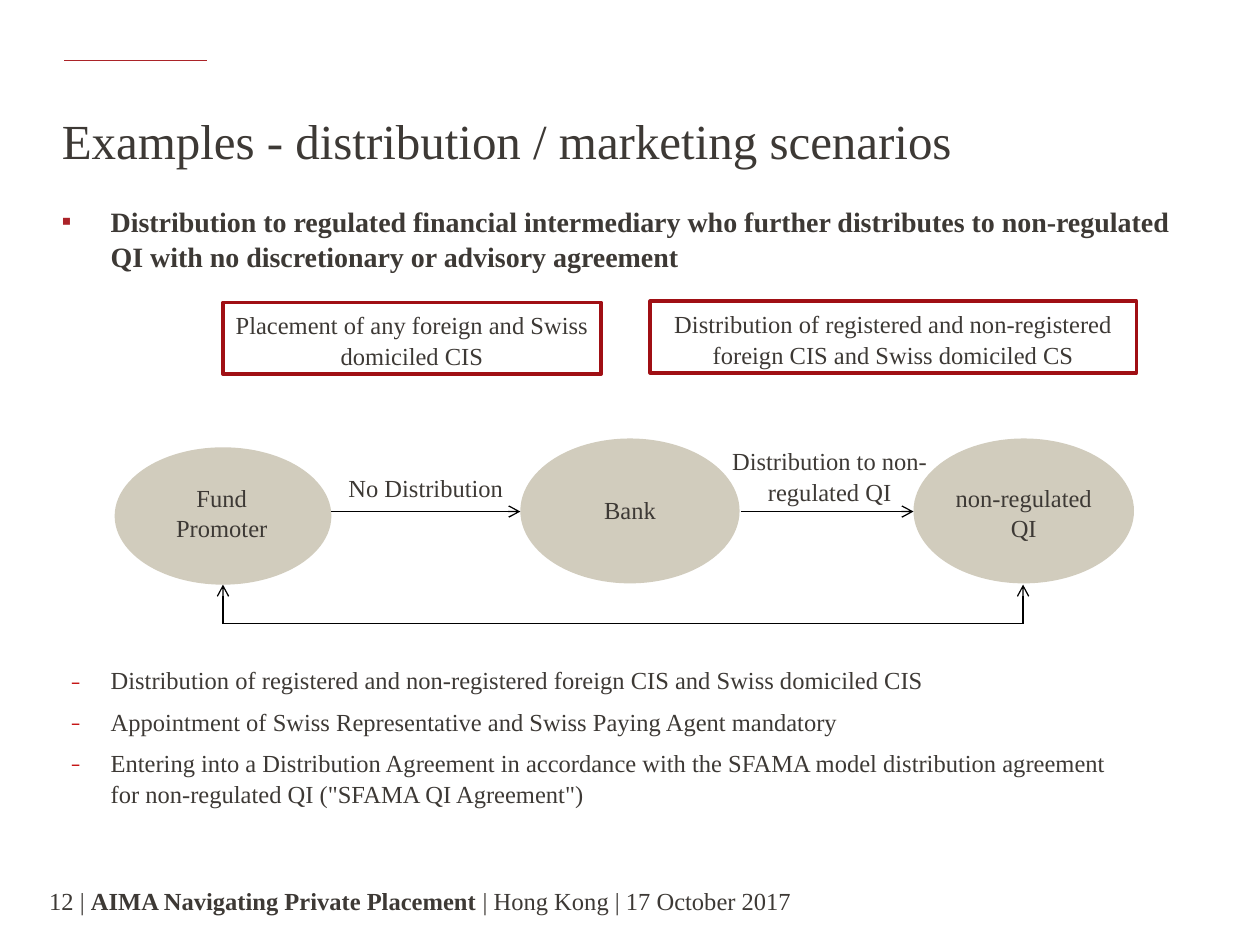
from dataclasses import dataclass
from typing import NamedTuple, Optional

from lxml.etree import SubElement
from pptx import Presentation
from pptx.dml.color import RGBColor
from pptx.enum.shapes import MSO_CONNECTOR as Connector, MSO_SHAPE as Preset
from pptx.enum.text import MSO_ANCHOR as Anchor, PP_ALIGN as Align
from pptx.oxml.ns import qn
from pptx.util import Inches, Pt


@dataclass(frozen=True)
class Theme:
    font: str = "Times New Roman"
    text: str = "3D3935"
    accent: str = "AB2328"
    bullet: str = "C00000"
    frame: str = "A00F14"
    oval: str = "D1CCBD"
    white: str = "FFFFFF"
    black: str = "000000"
    title_size: float = 28
    heading_size: float = 16
    body_size: float = 14
    line_spacing: float = 1.05


THEME = Theme()


class Box(NamedTuple):
    left: float
    top: float
    width: float
    height: float


class Run(NamedTuple):
    text: str
    bold: bool = False


class Bullet(NamedTuple):
    character: str
    color: str
    indent: float


class Label(NamedTuple):
    box: Box
    text: str
    wrap: bool = True
    inset: tuple = (0.1, 0.05, 0.1, 0.05)


class Line(NamedTuple):
    start: tuple
    end: tuple
    arrow: bool = True
    color: str = THEME.black
    width: float = 0.75


def rgb(color: str) -> RGBColor:
    return RGBColor.from_string(color)


def place(shape, box: Box) -> None:
    shape.left, shape.top, shape.width, shape.height = map(Inches, box)


def format_frame(frame, inset=(0.1, 0.05, 0.1, 0.05), anchor=Anchor.TOP, wrap=True) -> None:
    frame.word_wrap = wrap
    frame.vertical_anchor = anchor
    (frame.margin_left, frame.margin_top,
     frame.margin_right, frame.margin_bottom) = map(Inches, inset)


def add_bullet(paragraph, bullet: Bullet) -> None:
    properties = paragraph._p.get_or_add_pPr()
    properties.set("marL", str(Inches(bullet.indent)))
    properties.set("indent", str(-Inches(bullet.indent)))
    color = SubElement(properties, qn("a:buClr"))
    SubElement(color, qn("a:srgbClr"), val=bullet.color)
    SubElement(properties, qn("a:buFont"), typeface=THEME.font)
    SubElement(properties, qn("a:buChar"), char=bullet.character)


def write(paragraph, runs: list[Run], size: float = THEME.body_size,
          align=Align.LEFT, bullet: Optional[Bullet] = None) -> None:
    if bullet:
        add_bullet(paragraph, bullet)
        paragraph.space_after = Pt(6)
    paragraph.alignment = align
    paragraph.line_spacing = THEME.line_spacing
    for item in runs:
        run = paragraph.add_run()
        run.text = item.text
        run.font.name = THEME.font
        run.font.size = Pt(size)
        run.font.bold = item.bold
        run.font.color.rgb = rgb(THEME.text)


def add_text_box(slide, box: Box, **frame_options):
    shape = slide.shapes.add_textbox(*map(Inches, box))
    format_frame(shape.text_frame, **frame_options)
    return shape.text_frame


def add_label(slide, label: Label) -> None:
    frame = add_text_box(slide, label.box, inset=label.inset, wrap=label.wrap)
    write(frame.paragraphs[0], [Run(label.text)], align=Align.CENTER)


def add_list(slide, box: Box, items: list[Run], size: float, bullet: Bullet) -> None:
    frame = add_text_box(slide, box)
    for index, item in enumerate(items):
        paragraph = frame.add_paragraph() if index else frame.paragraphs[0]
        write(paragraph, [item], size, bullet=bullet)


def add_filled_shape(slide, preset, box: Box, fill: str):
    shape = slide.shapes.add_shape(preset, *map(Inches, box))
    shape.shadow.inherit = False
    shape.fill.solid()
    shape.fill.fore_color.rgb = rgb(fill)
    shape.line.fill.background()
    return shape


def add_callout(slide, label: Label) -> None:
    shape = add_filled_shape(slide, Preset.RECTANGLE, label.box, THEME.white)
    shape.line.color.rgb = rgb(THEME.frame)
    shape.line.width = Pt(2)
    SubElement(shape.line._get_or_add_ln(), qn("a:round"))
    format_frame(shape.text_frame)
    write(shape.text_frame.paragraphs[0], [Run(label.text)], align=Align.CENTER)


def add_line(slide, line: Line) -> None:
    connector = slide.shapes.add_connector(
        Connector.STRAIGHT, *map(Inches, line.start + line.end))
    connector.line.color.rgb = rgb(line.color)
    connector.line.width = Pt(line.width)
    if line.arrow:
        SubElement(connector.line._get_or_add_ln(), qn("a:tailEnd"), type="arrow")
    SubElement(connector._element.spPr, qn("a:effectLst"))


OVALS = [Box(0.91, 3.55, 1.72, 1.09), Box(4.13, 3.48, 1.74, 1.15), Box(7.25, 3.48, 1.75, 1.15)]

FLOW_Y, RETURN_Y, OVAL_BOTTOM = 4.06, 4.95, 4.64
PROMOTER_X, INVESTOR_X = 1.77, 8.12
LINES = [
    Line((2.63, FLOW_Y), (4.13, FLOW_Y)),
    Line((5.88, FLOW_Y), (7.25, FLOW_Y)),
    Line((PROMOTER_X, RETURN_Y), (INVESTOR_X, RETURN_Y), arrow=False),
    Line((INVESTOR_X, RETURN_Y), (INVESTOR_X, OVAL_BOTTOM)),
    Line((PROMOTER_X, RETURN_Y), (PROMOTER_X, OVAL_BOTTOM)),
]

LABELS = [
    Label(Box(1.09, 3.77, 1.34, 0.57), "Fund Promoter"),
    Label(Box(4.36, 3.87, 1.28, 0.34), "Bank"),
    Label(Box(7.42, 3.77, 1.41, 0.57), "non-regulated QI"),
    Label(Box(2.66, 3.69, 1.44, 0.57), "No Distribution", wrap=False),
    Label(Box(5.78, 3.53, 1.61, 0.47), "Distribution to non-regulated QI", inset=(0, 0, 0, 0)),
]

CALLOUTS = [
    Label(Box(1.77, 2.4, 3, 0.57), "Placement of any foreign and Swiss domiciled CIS"),
    Label(Box(5.16, 2.39, 3.86, 0.57),
          "Distribution of registered and non-registered foreign CIS and Swiss domiciled CS"),
]

HEADING = [Run("Distribution to regulated financial intermediary who further distributes to "
               "non-regulated QI with no discretionary or advisory agreement", bold=True)]
REQUIREMENTS = [
    Run("Distribution of registered and non-registered foreign CIS and Swiss domiciled CIS"),
    Run("Appointment of Swiss Representative and Swiss Paying Agent mandatory"),
    Run("Entering into a Distribution Agreement in accordance with the SFAMA model "
        'distribution agreement for non-regulated QI ("SFAMA QI Agreement")'),
]
FOOTER = [Run("12 | "), Run("AIMA Navigating Private Placement ", bold=True),
          Run("| Hong Kong | 17 October 2017")]


def main() -> None:
    presentation = Presentation()
    presentation.slide_width, presentation.slide_height = Inches(10), Inches(7.5)
    slide = presentation.slides.add_slide(presentation.slide_layouts[5])

    # Title and accent rule
    add_line(slide, Line((0.51, 0.48), (1.64, 0.48), False, THEME.accent, 1))
    title = slide.shapes.title
    place(title, Box(0.39, 0.91, 9.14, 0.78))
    format_frame(title.text_frame)
    heading = title.text_frame.paragraphs[0]
    write(heading, [Run("Examples - distribution / marketing scenarios")], THEME.title_size)
    heading.line_spacing = Pt(27.7)

    # Scenario heading
    add_list(slide, Box(0.39, 1.56, 9.14, 4.84), HEADING, THEME.heading_size,
             Bullet("▪", THEME.accent, 0.39))

    # Flow diagram
    for box in OVALS:
        add_filled_shape(slide, Preset.OVAL, box, THEME.oval)
    for line in LINES:
        add_line(slide, line)
    for label in LABELS:
        add_label(slide, label)
    for callout in CALLOUTS:
        add_callout(slide, callout)

    # Requirements and footer
    add_list(slide, Box(0.47, 5.22, 8.55, 1.21), REQUIREMENTS, THEME.body_size,
             Bullet("˗", THEME.bullet, 0.31))
    footer = add_text_box(slide, Box(0.39, 7.03, 6.34, 0.23),
                          inset=(0, 0, 0.1, 0), anchor=Anchor.MIDDLE)
    write(footer.paragraphs[0], FOOTER)

    presentation.save("out.pptx")


if __name__ == "__main__":
    main()
